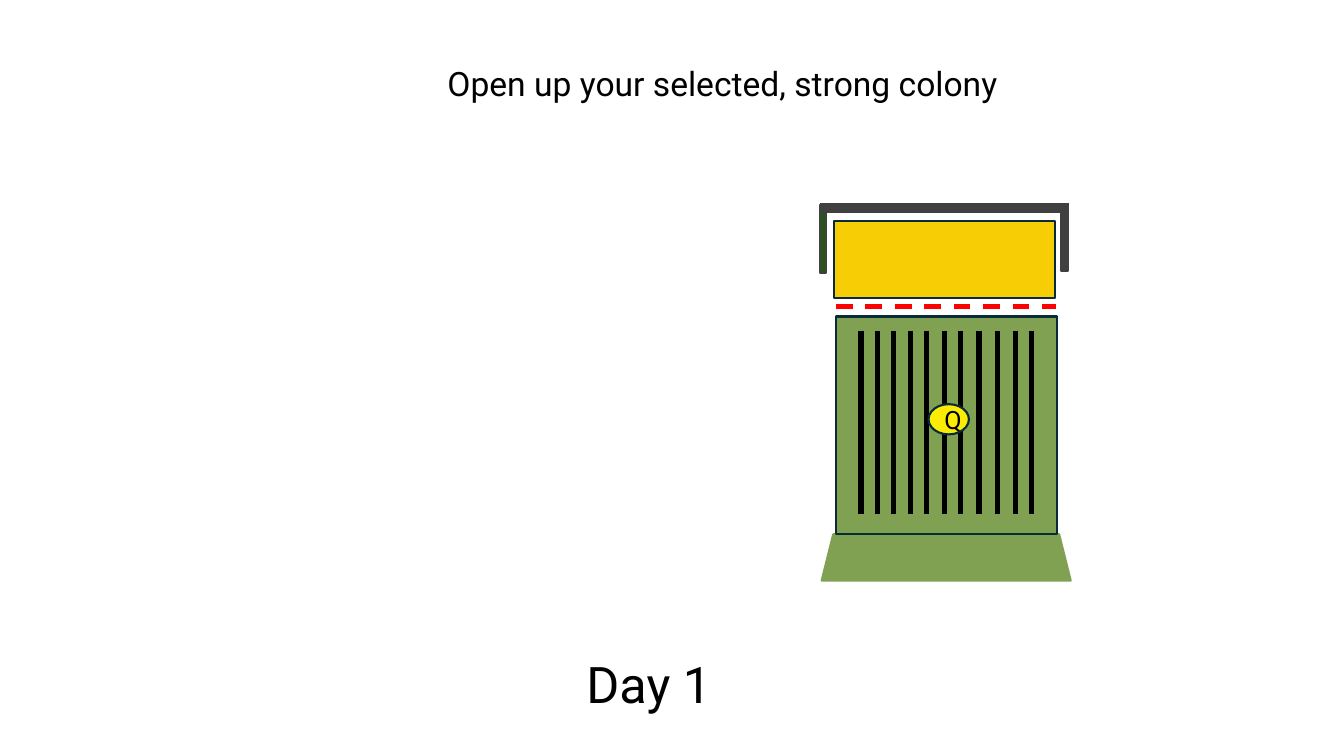
from lxml.etree import SubElement
from pptx import Presentation
from pptx.dml.color import RGBColor as Rgb
from pptx.enum.dml import MSO_LINE as Dash
from pptx.enum.shapes import MSO_CONNECTOR as Link, MSO_SHAPE as Kind
from pptx.enum.text import MSO_ANCHOR as Anchor, MSO_AUTO_SIZE as Fit, PP_ALIGN as Align
from pptx.oxml.ns import qn
from pptx.util import Inches, Pt

HUES = {
    "ink": "000000",
    "navy": "092A39",
    "honey": "F7CD05",
    "queen": "FCEC03",
    "hive": "80A152",
    "moss": "275417",
    "roof": "404040",
    "red": "FF0000",
}
FRAMES = [8.54, 8.7, 8.86, 9.03, 9.19, 9.37, 9.53, 9.71, 9.89, 10.07, 10.23]


def hue(name):
    return Rgb.from_string(HUES[name])


def apply(item, values):
    for key, value in values.items():
        setattr(item, key, value)


def add_block(slide, kind, box, fill, edge):
    block = slide.shapes.add_shape(kind, *map(Inches, box))
    block.shadow.inherit = False
    block.fill.solid()
    block.fill.fore_color.rgb = hue(fill)
    block.line.color.rgb = hue(edge)
    block.line.width = Pt(1.5)
    return block


def add_corner(slide, box, fill):
    corner = add_block(slide, Kind.RECTANGLE, box, fill, "roof")
    corner._element.spPr.find(qn("a:prstGeom")).set("prst", "corner")
    corner.rotation = 180
    return corner


def add_rule(slide, start, end, color, width, dash=None):
    rule = slide.shapes.add_connector(Link.STRAIGHT, *map(Inches, start + end))
    rule.line.color.rgb = hue(color)
    apply(rule.line, {"width": Pt(width), "dash_style": dash})
    SubElement(rule._element.spPr, qn("a:effectLst"))


def write(frame, text, size, align):
    para = frame.paragraphs[0]
    para.alignment = align
    run = para.add_run()
    run.text = text
    apply(run.font, {"name": "Roboto", "size": Pt(size)})
    run.font.color.rgb = hue("ink")


def add_label(slide, box, text, size):
    frame = slide.shapes.add_textbox(*map(Inches, box)).text_frame
    apply(frame, {"word_wrap": True, "auto_size": Fit.SHAPE_TO_FIT_TEXT})
    write(frame, text, size, Align.CENTER)


def add_roof(slide):
    add_corner(slide, (10.46, 2.03, 0.13, 0.66), "roof")
    left = add_corner(slide, (8.13, 2.03, 0.13, 0.68), "moss")
    left._element.spPr.xfrm.set("flipH", "1")
    add_rule(slide, (8.13, 2.06), (10.6, 2.06), "roof", 7)


def add_brood(slide):
    add_block(slide, Kind.RECTANGLE, (8.29, 3.14, 2.19, 2.16), "hive", "navy")
    for x in FRAMES:
        add_rule(slide, (x, 3.28), (x, 5.1), "ink", 3.75)
    queen = add_block(slide, Kind.OVAL, (9.21, 4.01, 0.4, 0.3), "queen", "navy")
    queen.text_frame.vertical_anchor = Anchor.MIDDLE
    write(queen.text_frame, "Q", 18, Align.LEFT)


def main():
    deck = Presentation()
    apply(deck, {"slide_width": Inches(13.33), "slide_height": Inches(7.5)})
    slide = deck.slides.add_slide(deck.slide_layouts[6])
    add_block(slide, Kind.RECTANGLE, (8.27, 2.19, 2.19, 0.77), "honey", "navy")
    add_block(slide, Kind.TRAPEZOID, (8.15, 5.3, 2.47, 0.46), "hive", "hive")
    add_rule(slide, (8.29, 3.04), (10.47, 3.04), "red", 3, Dash.DASH)
    add_roof(slide)
    add_label(slide, (5.34, 6.43, 2.19, 0.71), "Day 1", 36)
    add_brood(slide)
    add_label(slide, (2.1, 0.58, 10.13, 0.5), "Open up your selected, strong colony", 24)
    deck.save("out.pptx")


if __name__ == "__main__":
    main()
